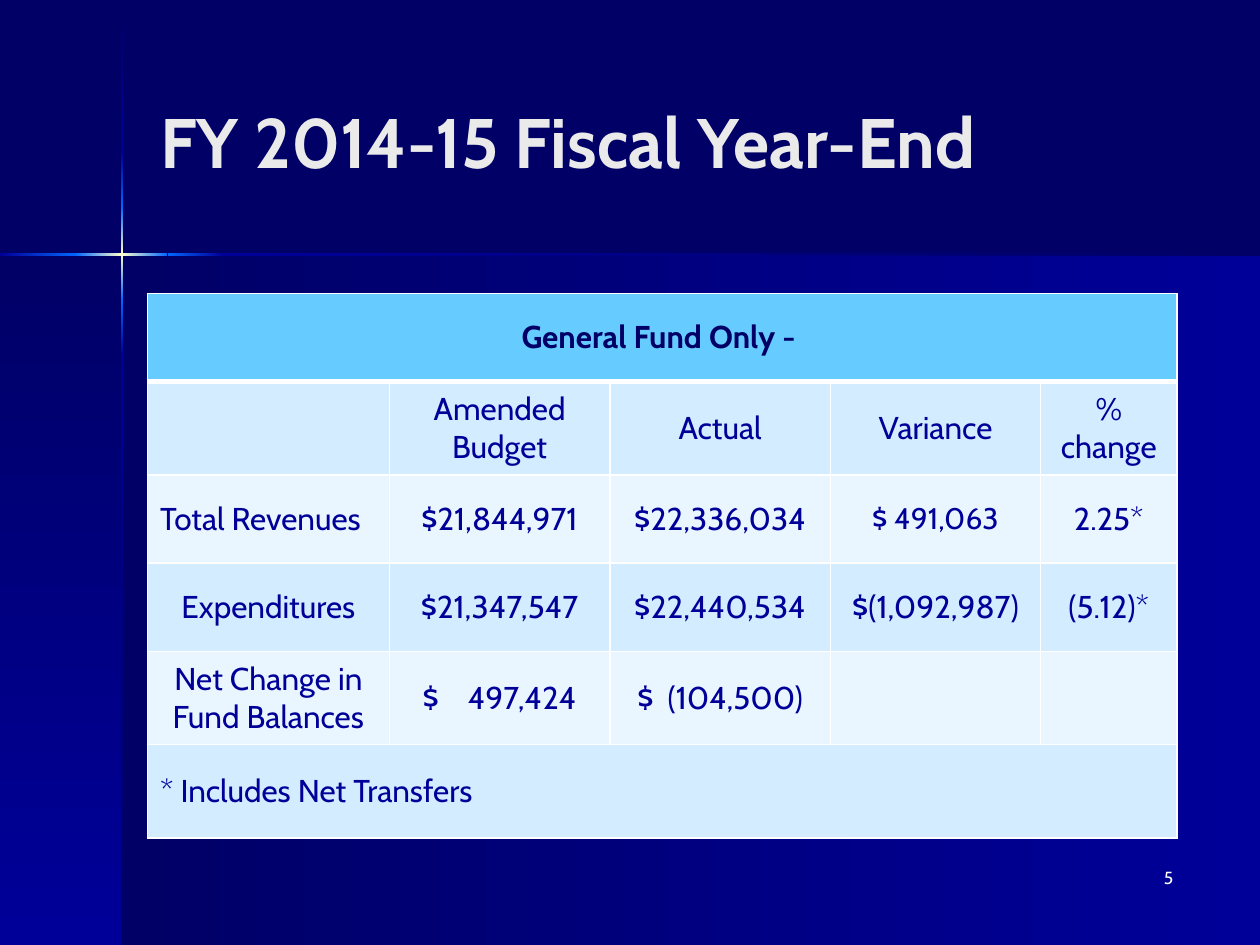
from typing import NamedTuple

from copy import deepcopy
from lxml.etree import SubElement
from pptx import Presentation
from pptx.dml.color import RGBColor
from pptx.enum.shapes import MSO_SHAPE
from pptx.enum.text import MSO_ANCHOR, PP_ALIGN
from pptx.oxml.ns import qn
from pptx.util import Inches, Pt

FONT = "Cabin"
NIGHT, NAVY, BLUE, GLOW, WHITE = "000066", "000099", "0066FF", "FFFFCC", "FFFFFF"
HEADER, BAND_DARK, BAND_LIGHT = "66CCFF", "D3ECFF", "EAF6FF"
DOWN, RIGHT = 90, 0


class Panel(NamedTuple):
    left: float
    top: float
    width: float
    height: float
    colors: tuple[str, ...]
    direction: int


class Text(NamedTuple):
    text: str
    size: float = 18
    align: PP_ALIGN = PP_ALIGN.CENTER
    gap: float = 0  # extra points after the currency sign


def rgb(color: str) -> RGBColor:
    return RGBColor.from_string(color)


def add_run(p, text: str, size: float, color: str, bold: bool = False):
    r = p.add_run()
    r.text = text
    r.font.name, r.font.size, r.font.bold = FONT, Pt(size), bold
    r.font.color.rgb = rgb(color)
    return r


def add_panel(slide, panel: Panel) -> None:
    sp = slide.shapes.add_shape(MSO_SHAPE.RECTANGLE, *map(Inches, panel[:4]))
    sp.shadow.inherit = False
    sp.line.fill.background()
    fill = sp.fill
    fill.gradient()
    fill.gradient_angle = (360 - panel.direction) % 360
    stops = sp._element.spPr.find(".//" + qn("a:gsLst"))
    for _ in panel.colors[2:]:
        stops.append(deepcopy(stops[-1]))
    last = len(panel.colors) - 1
    for i, (stop, color) in enumerate(zip(fill.gradient_stops, panel.colors)):
        stop.position = i / last
        stop.color.rgb = rgb(color)


def set_borders(cell, top: float = 1, bottom: float = 1) -> None:
    tc_pr = cell._tc.get_or_add_tcPr()
    widths = {"a:lnL": 1, "a:lnR": 1, "a:lnT": top, "a:lnB": bottom}
    for i, (tag, width) in enumerate(widths.items()):
        ln = SubElement(tc_pr, qn(tag), w=str(Pt(width)))
        SubElement(SubElement(ln, qn("a:solidFill")), qn("a:srgbClr"), val=WHITE)
        tc_pr.insert(i, ln)


def fill_cell(cell, item: Text, color: str, bold: bool) -> None:
    p = cell.text_frame.paragraphs[0]
    p.alignment = item.align
    if not item.gap:
        add_run(p, item.text, item.size, color, bold)
        return
    sign, amount = item.text.split(" ")
    add_run(p, sign, item.size, color, bold)
    space = add_run(p, " ", item.size, color, bold)
    space.font._element.set("spc", str(int(item.gap * 100)))
    add_run(p, amount, item.size, color, bold)


# Background panels
PANELS = [
    Panel(0.97, 2.02, 9.03, 5.48, (NIGHT, NAVY), RIGHT),
    Panel(0, 2.02, 0.97, 5.48, (NIGHT, NAVY), DOWN),
]

# Light beams: (start, end, colours) along each axis
FADE_IN, FADE_OUT, STAR = (NAVY, BLUE), (BLUE, NAVY), (BLUE, GLOW, BLUE)
VERTICAL_BEAM = [
    (0.01, 1.21, (NIGHT, NAVY)),
    (2.82, 7.5, (NAVY, NIGHT)),
    (2.38, 2.82, FADE_OUT),
    (1.21, 1.65, FADE_IN),
    (1.65, 2.38, STAR),
]
HORIZONTAL_BEAM = [
    (1.77, 10, (NAVY, NIGHT)),
    (0, 0.61, FADE_IN),
    (1.33, 1.77, FADE_OUT),
    (0.6, 1.33, STAR),
]
BEAM = 0.02
PANELS += [Panel(0.96, a, BEAM, b - a, c, DOWN) for a, b, c in VERTICAL_BEAM]
PANELS += [Panel(a, 2.01, b - a, BEAM, c, RIGHT) for a, b, c in HORIZONTAL_BEAM]

# Table content
COLUMNS = [1.92, 1.75, 1.75, 1.67, 1.08]
HEIGHTS = [0.7, 0.74, 0.7, 0.7, 0.74, 0.74]
ROWS = [
    [Text("General Fund Only - ")],
    [None, Text("Amended Budget"), Text("Actual"), Text("Variance"), Text("% change")],
    [Text("Total Revenues", align=PP_ALIGN.LEFT), Text("$21,844,971"),
     Text("$22,336,034"), Text("$ 491,063", size=17), Text("2.25*")],
    [Text("Expenditures"), Text("$21,347,547"), Text("$22,440,534"),
     Text("$(1,092,987)"), Text("(5.12)*")],
    [Text("Net Change in Fund Balances"), Text("$ 497,424", gap=12.5),
     Text("$ (104,500)", gap=4)],
    [Text("* Includes Net Transfers", align=PP_ALIGN.LEFT)],
]


def add_fund_table(slide) -> None:
    frame = slide.shapes.add_table(
        len(ROWS), len(COLUMNS), Inches(1.17), Inches(2.33),
        Inches(sum(COLUMNS)), Inches(sum(HEIGHTS)))
    table = frame.table
    for column, width in zip(table.columns, COLUMNS):
        column.width = Inches(width)
    for i, (row, height) in enumerate(zip(table.rows, HEIGHTS)):
        row.height = Inches(height)
        is_header = i == 0
        band = HEADER if is_header else BAND_DARK if i % 2 else BAND_LIGHT
        for cell in row.cells:
            cell.fill.solid()
            cell.fill.fore_color.rgb = rgb(band)
            cell.vertical_anchor = MSO_ANCHOR.MIDDLE
            set_borders(cell, 3 if i == 1 else 1, 3 if is_header else 1)
        if len(ROWS[i]) == 1:
            table.cell(i, 0).merge(table.cell(i, len(COLUMNS) - 1))
        for cell, item in zip(row.cells, ROWS[i]):
            if item:
                fill_cell(cell, item, NIGHT if is_header else NAVY, is_header)


def main() -> None:
    prs = Presentation()
    prs.slide_width, prs.slide_height = Inches(10), Inches(7.5)
    slide = prs.slides.add_slide(prs.slide_layouts[5])
    slide.background.fill.solid()
    slide.background.fill.fore_color.rgb = rgb(NIGHT)

    for panel in PANELS:
        add_panel(slide, panel)

    # Title
    title = slide.shapes.title
    title.left, title.top = Inches(1.17), Inches(0.33)
    title.width, title.height = Inches(8.25), Inches(1.57)
    tf = title.text_frame
    tf.vertical_anchor = MSO_ANCHOR.MIDDLE
    p = tf.paragraphs[0]
    p.alignment = PP_ALIGN.LEFT
    add_run(p, "FY 2014-15 Fiscal Year-End", 40, "EAEAEA", bold=True)

    add_fund_table(slide)

    # Page number
    box = slide.shapes.add_textbox(Inches(7.33), Inches(6.83), Inches(2.08), Inches(0.5))
    box.text_frame.word_wrap = True
    p = box.text_frame.paragraphs[0]
    p.alignment = PP_ALIGN.RIGHT
    add_run(p, "5", 10, WHITE)

    prs.save("out.pptx")


if __name__ == "__main__":
    main()
